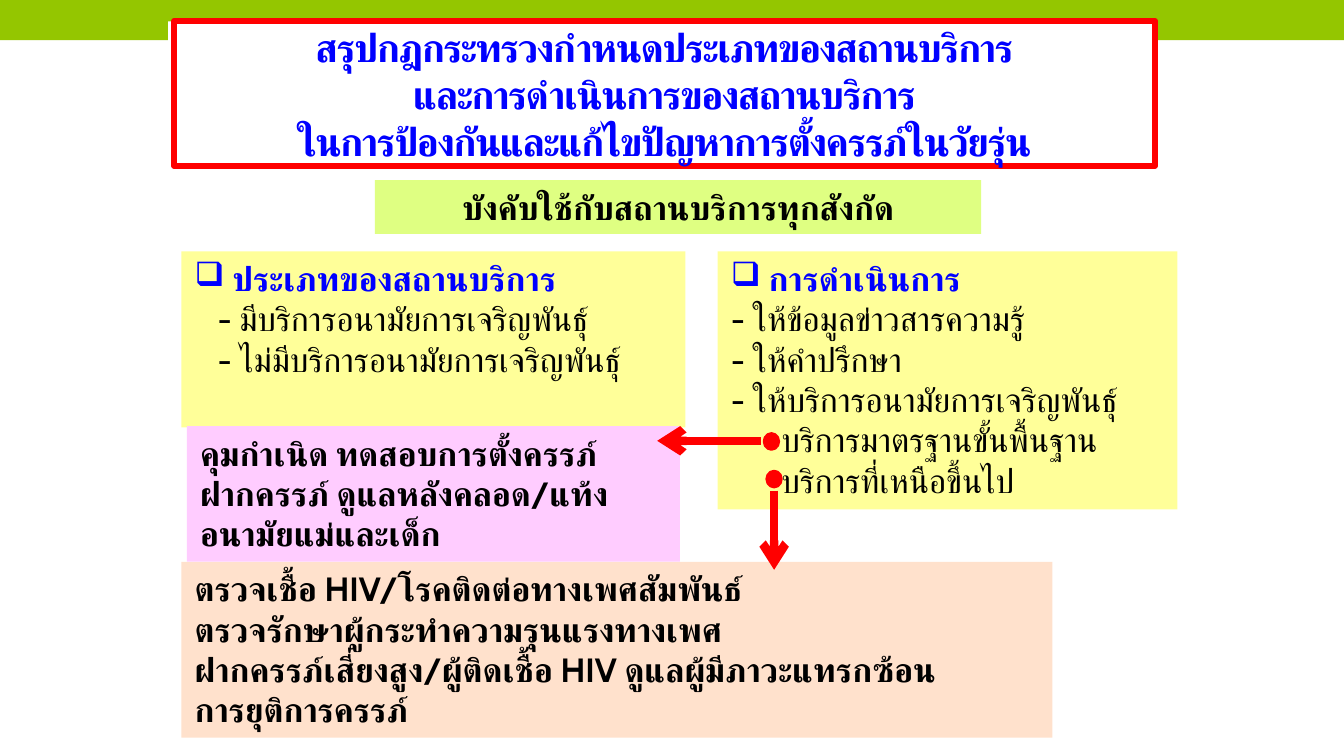
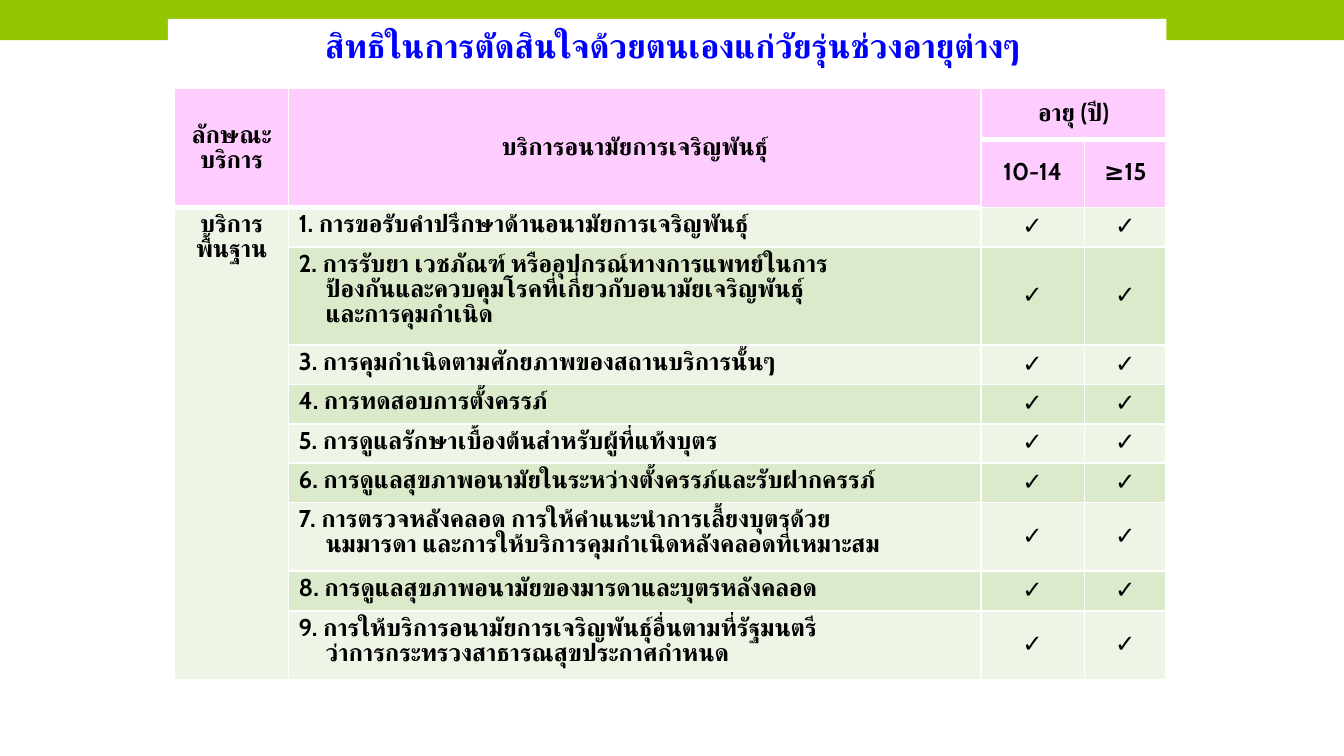
from dataclasses import dataclass
from typing import NamedTuple

from lxml.etree import SubElement
from pptx import Presentation
from pptx.dml.color import RGBColor
from pptx.enum.shapes import MSO_CONNECTOR as Link, MSO_SHAPE as Shape
from pptx.enum.text import MSO_ANCHOR as Anchor, MSO_AUTO_SIZE as Fit, PP_ALIGN as Align
from pptx.oxml.ns import qn
from pptx.util import Inches, Pt


@dataclass(frozen=True)
class Theme:
    font: str = "Cabin"
    band: str = "94C600"
    white: str = "FFFFFF"
    black: str = "000000"
    blue: str = "0000FF"
    red: str = "FF0000"
    lime: str = "DFFF82"
    yellow: str = "FFFF99"
    pink: str = "FFCCFF"
    peach: str = "FFE1CC"
    stripes: tuple[str, str] = ("EEF5E7", "DCEACC")
    title: float = 21
    body: float = 18
    cell: float = 13


THEME = Theme()
COLUMNS, ROWS = 100, 56.25
WIDTH = Inches(10)
HEIGHT = WIDTH * 9 // 16


class Area(NamedTuple):
    """A place in grid columns and rows."""
    left: float
    top: float
    width: float
    height: float


class Line(NamedTuple):
    """One paragraph; indents in grid columns."""
    text: str
    color: str = THEME.black
    bold: bool = True
    margin: float = 0
    hang: float = 0
    bullet: str = ""


class Card(NamedTuple):
    area: Area
    fill: str
    lines: list[Line]
    align: Align = Align.LEFT


class Arrow(NamedTuple):
    start: tuple[float, float]
    end: tuple[float, float]
    dot: Area


def col(count: float) -> int:
    return round(WIDTH * count / COLUMNS)


def row(count: float) -> int:
    return round(HEIGHT * count / ROWS)


def place(area: Area) -> tuple[int, int, int, int]:
    return col(area.left), row(area.top), col(area.width), row(area.height)


def rgb(color: str) -> RGBColor:
    return RGBColor.from_string(color)


# Text
def write(frame, lines: list[Line], size: float, align=Align.LEFT,
          spacing: float | None = None, tracking: int = 0) -> None:
    for index, line in enumerate(lines):
        para = frame.paragraphs[0] if index == 0 else frame.add_paragraph()
        para.alignment = align
        if spacing:
            para.line_spacing = spacing
        props = para._p.get_or_add_pPr()
        if line.margin:
            props.set("marL", str(col(line.margin)))
            props.set("indent", str(-col(line.hang)))
        if line.bullet:
            SubElement(props, qn("a:buChar"), char=line.bullet)
        for part, text in enumerate(line.text.split("\n")):
            if part:
                para.add_line_break()
            span = para.add_run()
            span.text = text
            font = span.font
            font.name, font.size, font.bold = THEME.font, Pt(size), line.bold
            font.color.rgb = rgb(line.color)
            mark = span._r.get_or_add_rPr()
            SubElement(mark, qn("a:cs"), typeface=THEME.font)
            if tracking:
                mark.set("spc", str(tracking))


def set_frame(frame, anchor=Anchor.TOP) -> None:
    frame.word_wrap = True
    frame.auto_size = Fit.NONE
    frame.vertical_anchor = anchor


# Shapes
def add_block(page, area: Area, fill: str, kind=Shape.RECTANGLE, edge: float = 0):
    box = page.shapes.add_shape(kind, *place(area))
    box.shadow.inherit = False
    box.fill.solid()
    box.fill.fore_color.rgb = rgb(fill)
    if edge:
        box.line.color.rgb, box.line.width = rgb(fill), Pt(edge)
    else:
        box.line.fill.background()
    return box


def add_card(page, card: Card) -> None:
    box = add_block(page, card.area, card.fill)
    set_frame(box.text_frame)
    write(box.text_frame, card.lines, THEME.body, card.align)


def add_arrow(page, arrow: Arrow) -> None:
    (x1, y1), (x2, y2) = arrow.start, arrow.end
    line = page.shapes.add_connector(Link.STRAIGHT, col(x1), row(y1), col(x2), row(y2))
    line.line.color.rgb, line.line.width = rgb(THEME.red), Pt(4.5)
    SubElement(line.line._get_or_add_ln(), qn("a:tailEnd"), type="arrow")
    SubElement(line._element.spPr, qn("a:effectLst"))


# Shared page: white panel behind the title
def add_page(deck, panel: Area, title_area: Area, title: str, size: float,
             anchor: Anchor, tracking: int = 0):
    page = deck.slides.add_slide(deck.slide_layouts[5])
    back = add_block(page, panel, THEME.white)
    page.shapes.element.insert(2, back.element)
    head = page.shapes.title
    head.left, head.top, head.width, head.height = place(title_area)
    set_frame(head.text_frame, anchor)
    write(head.text_frame, [Line(title, THEME.blue)], size, Align.CENTER, tracking=tracking)
    return page


# Table
def set_borders(cell, bottom: float) -> None:
    props = cell._tc.get_or_add_tcPr()
    for side, width in (("L", 1), ("R", 1), ("T", 1), ("B", bottom)):
        edge = SubElement(props, qn(f"a:ln{side}"), w=str(Pt(width)))
        SubElement(SubElement(edge, qn("a:solidFill")), qn("a:srgbClr"), val=THEME.white)


def add_rights_table(page, area: Area, widths: list[float], heights: list[float],
                     texts: dict[tuple[int, int], list[str]],
                     merges: list[tuple[int, int, int, int]]) -> None:
    table = page.shapes.add_table(len(heights), len(widths), *place(area)).table
    table.horz_banding = False
    for column, width in zip(table.columns, widths):
        column.width = col(width)
    for line, height in zip(table.rows, heights):
        line.height = row(height)
    for top, left, bottom, right in merges:
        table.cell(top, left).merge(table.cell(bottom, right))
    for r in range(len(heights)):
        for c in range(len(widths)):
            cell, header = table.cell(r, c), r < 2
            cell.margin_left = cell.margin_right = col(0.75)
            cell.margin_top = cell.margin_bottom = row(0.4)
            set_borders(cell, 3 if r == 0 or (r == 1 and c < 2) else 1)
            cell.fill.solid()
            cell.fill.fore_color.rgb = rgb(THEME.pink if header else THEME.stripes[0 if c == 0 else r % 2])
            cell.vertical_anchor = Anchor.MIDDLE if header or c > 1 else Anchor.TOP
            if (r, c) in texts:
                service = c == 1 and not header
                indent = 2 if service else 0
                lines = [Line(text, margin=indent, hang=0 if index else indent)
                         for index, text in enumerate(texts[r, c])]
                write(cell.text_frame, lines, THEME.cell,
                      Align.LEFT if service else Align.CENTER, 0.85)
            else:
                SubElement(cell.text_frame.paragraphs[0]._p, qn("a:endParaRPr"),
                           sz=str(int(THEME.cell * 100)))


# Content
CARDS = [
    Card(Area(27.9, 13.4, 45.1, 4), THEME.lime,
         [Line("บังคับใช้กับสถานบริการทุกสังกัด")], Align.CENTER),
    Card(Area(13.5, 18.7, 37.5, 13.1), THEME.yellow, [
        Line("ประเภทของสถานบริการ", THEME.blue, True, 2.8, 2.8, "❑"),
        Line("- มีบริการอนามัยการเจริญพันธุ์", bold=False, margin=1.7),
        Line("- ไม่มีบริการอนามัยการเจริญพันธุ์", bold=False, margin=1.7)]),
    Card(Area(53.4, 18.7, 34.2, 19.2), THEME.yellow, [
        Line("การดำเนินการ", THEME.blue, True, 2.8, 2.8, "❑"),
        Line("- ให้ข้อมูลข่าวสารความรู้", bold=False),
        Line("- ให้คำปรึกษา", bold=False),
        Line("- ให้บริการอนามัยการเจริญพันธุ์", bold=False),
        Line("บริการมาตรฐานขั้นพื้นฐาน", bold=False, margin=3.75),
        Line("บริการที่เหนือขึ้นไป", bold=False, margin=3.75)]),
    Card(Area(13.5, 41.8, 64.8, 13.1), THEME.peach, [
        Line("ตรวจเชื้อ HIV/โรคติดต่อทางเพศสัมพันธ์"),
        Line("ตรวจรักษาผู้กระทำความรุนแรงทางเพศ\n"
             "ฝากครรภ์เสี่ยงสูง/ผู้ติดเชื้อ HIV ดูแลผู้มีภาวะแทรกซ้อน"),
        Line("การยุติการครรภ์")]),
    Card(Area(13.9, 31.7, 36.7, 10.1), THEME.pink, [
        Line("คุมกำเนิด ทดสอบการตั้งครรภ์"),
        Line("ฝากครรภ์ ดูแลหลังคลอด/แท้ง"),
        Line("อนามัยแม่และเด็ก")]),
]

ARROWS = [
    Arrow((56.6, 32.8), (48.9, 32.8), Area(56.9, 32.3, 1, 1.1)),
    Arrow((57.6, 36.5), (57.6, 42.4), Area(57.1, 35.1, 1, 1.1)),
]

SERVICES = [
    ["1. การขอรับคำปรึกษาด้านอนามัยการเจริญพันธุ์"],
    ["2. การรับยา เวชภัณฑ์ หรืออุปกรณ์ทางการแพทย์ในการ\n"
     "ป้องกันและควบคุมโรคที่เกี่ยวกับอนามัยเจริญพันธุ์", "และการคุมกำเนิด"],
    ["3. การคุมกำเนิดตามศักยภาพของสถานบริการนั้นๆ"],
    ["4. การทดสอบการตั้งครรภ์"],
    ["5. การดูแลรักษาเบื้องต้นสำหรับผู้ที่แท้งบุตร"],
    ["6. การดูแลสุขภาพอนามัยในระหว่างตั้งครรภ์และรับฝากครรภ์"],
    ["7. การตรวจหลังคลอด การให้คำแนะนำการเลี้ยงบุตรด้วย\n"
     "นมมารดา และการให้บริการคุมกำเนิดหลังคลอดที่เหมาะสม"],
    ["8. การดูแลสุขภาพอนามัยของมารดาและบุตรหลังคลอด"],
    ["9. การให้บริการอนามัยการเจริญพันธุ์อื่นตามที่รัฐมนตรี\n"
     "ว่าการกระทรวงสาธารณสุขประกาศกำหนด"],
]


def build_summary(deck) -> None:
    page = add_page(deck, Area(12.5, 1.6, 73.5, 53.4), Area(12.95, 1.55, 73, 10.8),
                    "สรุปกฎกระทรวงกำหนดประเภทของสถานบริการ\n"
                    "และการดำเนินการของสถานบริการ\n"
                    "ในการป้องกันและแก้ไขปัญหาการตั้งครรภ์ในวัยรุ่น",
                    THEME.title, Anchor.MIDDLE, -80)
    frame = page.shapes.title.line
    frame.color.rgb, frame.width = rgb(THEME.red), Pt(3)
    for card in CARDS:
        add_card(page, card)
    for arrow in ARROWS:
        add_arrow(page, arrow)
    for arrow in ARROWS:
        add_block(page, arrow.dot, THEME.red, Shape.OVAL, 2.08)


def build_rights(deck) -> None:
    page = add_page(deck, Area(12.5, 1.4, 74.3, 52.9), Area(19.9, 1.35, 60.3, 4),
                    "สิทธิในการตัดสินใจด้วยตนเองแก่วัยรุ่นช่วงอายุต่างๆ", THEME.body, Anchor.TOP)
    texts = {(0, 0): ["ลักษณะบริการ"], (0, 1): ["บริการอนามัยการเจริญพันธุ์"],
             (0, 2): ["อายุ (ปี)"], (1, 2): ["10-14"], (1, 3): ["≥15"],
             (2, 0): ["บริการพื้นฐาน"]}
    for r, service in enumerate(SERVICES, start=2):
        texts |= {(r, 1): service, (r, 2): ["✓"], (r, 3): ["✓"]}
    add_rights_table(page, Area(12.98, 6.6, 73.8, 44.1), [8.5, 51.5, 7.7, 6.1],
                     [3.75, 5.1, 2.93, 7.3, 2.93, 2.93, 2.93, 2.93, 5.1, 2.97, 5.1], texts,
                     [(0, 0, 1, 0), (0, 1, 1, 1), (0, 2, 0, 3), (2, 0, 10, 0)])


def main() -> None:
    deck = Presentation()
    deck.slide_width, deck.slide_height = WIDTH, HEIGHT
    build_summary(deck)
    build_rights(deck)
    # Green band, kept on the shared layout
    band = add_block(deck.slides[0], Area(0, 0, COLUMNS, 3), THEME.band)
    deck.slide_layouts[5].shapes.element.insert(2, band.element)
    deck.save("out.pptx")


if __name__ == "__main__":
    main()
